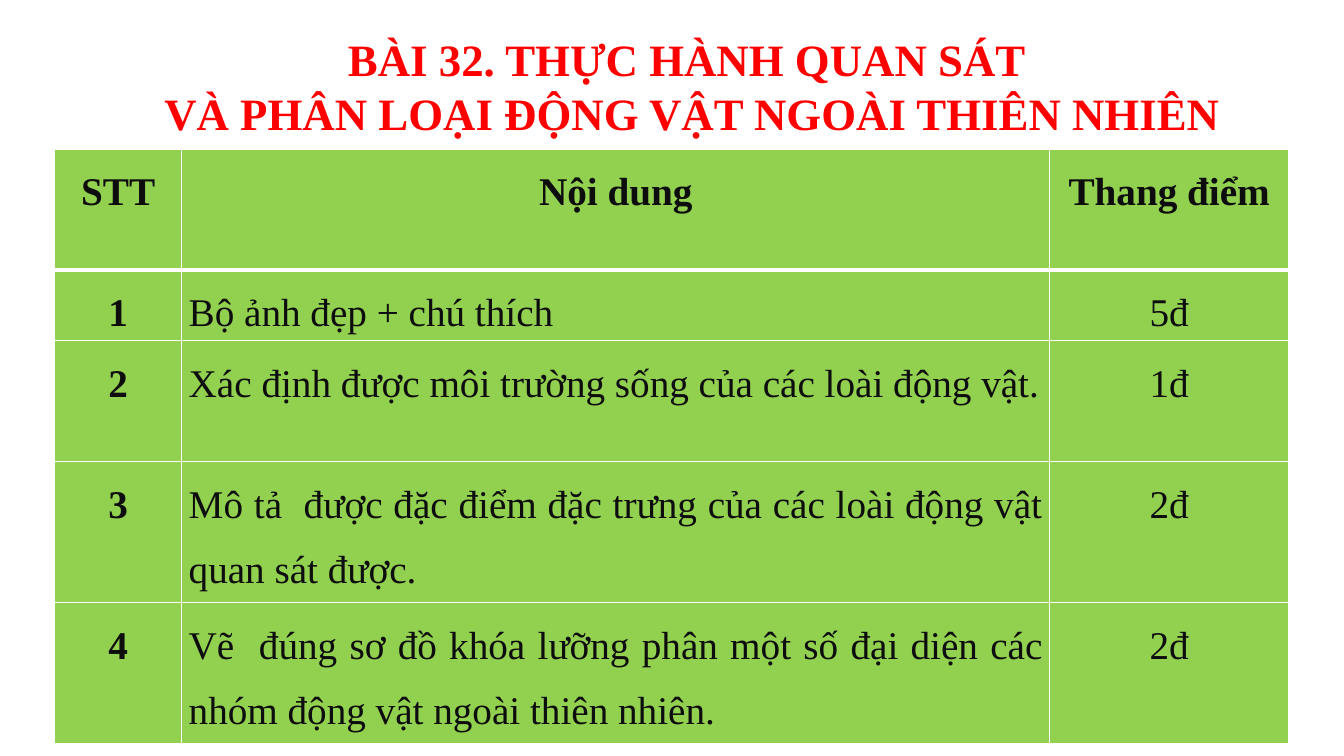
"""Builds the scoring table slide for the lesson 32 field practice."""
import pptx
import pptx.dml.color
import pptx.enum.text
import pptx.oxml
import pptx.oxml.ns
import pptx.util

RED = pptx.dml.color.RGBColor(0xFF, 0x00, 0x00)
INK = pptx.dml.color.RGBColor(0x0D, 0x0D, 0x0D)
GREEN = pptx.dml.color.RGBColor(0x92, 0xD0, 0x50)
WHITE = pptx.dml.color.RGBColor(0xFF, 0xFF, 0xFF)
ALIGN = pptx.enum.text.PP_ALIGN

HEADING = ["BÀI 32. THỰC HÀNH QUAN SÁT ", "VÀ PHÂN LOẠI ĐỘNG VẬT NGOÀI THIÊN NHIÊN"]
CRITERIA = [
    ("STT", "Nội dung", "Thang điểm"),
    ("1", "Bộ ảnh đẹp + chú thích", "5đ"),
    ("2", "Xác định được môi trường sống của các loài động vật.", "1đ"),
    ("3", "Mô tả  được đặc điểm đặc trưng của các loài động vật quan sát được.", "2đ"),
    ("4", "Vẽ  đúng sơ đồ khóa lưỡng phân một số đại diện các nhóm động vật ngoài thiên nhiên.", "2đ"),
]


class LessonSlide:
    """Holds the font, the percentage grid and the current slide."""

    FONT = "Times New Roman"

    def __init__(self, deck):
        self.deck = deck
        self.slide = deck.slides.add_slide(deck.slide_layouts[6])

    def across(self, percent):
        """Turn a share of the slide width into a length."""
        return round(self.deck.slide_width * percent / 100)

    def down(self, percent):
        """Turn a share of the slide height into a length."""
        return round(self.deck.slide_height * percent / 100)

    def area(self, left, top, width, height):
        """Turn four shares into a position and size."""
        return self.across(left), self.down(top), self.across(width), self.down(height)

    def add_words(self, paragraph, words, size, color, bold, align):
        """Add one styled run to an aligned paragraph."""
        paragraph.alignment = align
        run = paragraph.add_run()
        run.text = words
        run.font.name = self.FONT
        run.font.size = pptx.util.Pt(size)
        run.font.color.rgb = color
        run.font.bold = bold

    def title(self, lines, area):
        """Add the centred heading, one paragraph a line."""
        frame = self.slide.shapes.add_textbox(*self.area(*area)).text_frame
        frame.word_wrap = True
        for index, line in enumerate(lines):
            paragraph = frame.add_paragraph() if index else frame.paragraphs[0]
            self.add_words(paragraph, line, 32, RED, True, ALIGN.CENTER)

    def borders(self, cell, widths):
        """Draw white cell borders with a width in points for each side."""
        properties = cell._tc.get_or_add_tcPr()
        for index, (side, points) in enumerate(widths.items()):
            properties.insert(index, pptx.oxml.parse_xml(
                f'<a:ln{side} {pptx.oxml.ns.nsdecls("a")} w="{pptx.util.Pt(points)}">'
                f'<a:solidFill><a:srgbClr val="{WHITE}"/></a:solidFill></a:ln{side}>'))

    def score_table(self, rows, area, widths, heights):
        """Add the table with a bold header and a bold number column."""
        table = self.slide.shapes.add_table(len(rows), len(widths), *self.area(*area)).table
        for column, width in zip(table.columns, widths):
            column.width = self.across(width)
        for row, height in zip(table.rows, heights):
            row.height = self.down(height)
        for r, row in enumerate(rows):
            for c, words in enumerate(row):
                cell = table.cell(r, c)
                cell.fill.solid()
                cell.fill.fore_color.rgb = GREEN
                cell.margin_left = cell.margin_right = pptx.util.Inches(0.07)
                cell.margin_top = cell.margin_bottom = 0
                self.borders(cell, {"L": 1, "R": 1, "T": 3 if r == 1 else 1, "B": 1 if r else 3})
                paragraph = cell.text_frame.paragraphs[0]
                paragraph.line_spacing = 1.5
                paragraph.space_after = pptx.util.Pt(6)
                align = ALIGN.JUSTIFY if r and c == 1 else ALIGN.CENTER
                self.add_words(paragraph, words, 28, INK, r == 0 or c == 0, align)


def main():
    """Build and save the slide."""
    deck = pptx.Presentation()
    deck.slide_width = pptx.util.Inches(13.33)
    deck.slide_height = pptx.util.Inches(7.5)
    lesson = LessonSlide(deck)
    lesson.title(HEADING, (8.7, 3.6, 85.6, 15.73))
    lesson.score_table(CRITERIA, (4.07, 19.7, 91.8, 78.7),
                       widths=(9.45, 64.6, 17.75), heights=(16, 7.73, 16, 16, 16))
    deck.save("out.pptx")


if __name__ == "__main__":
    main()
